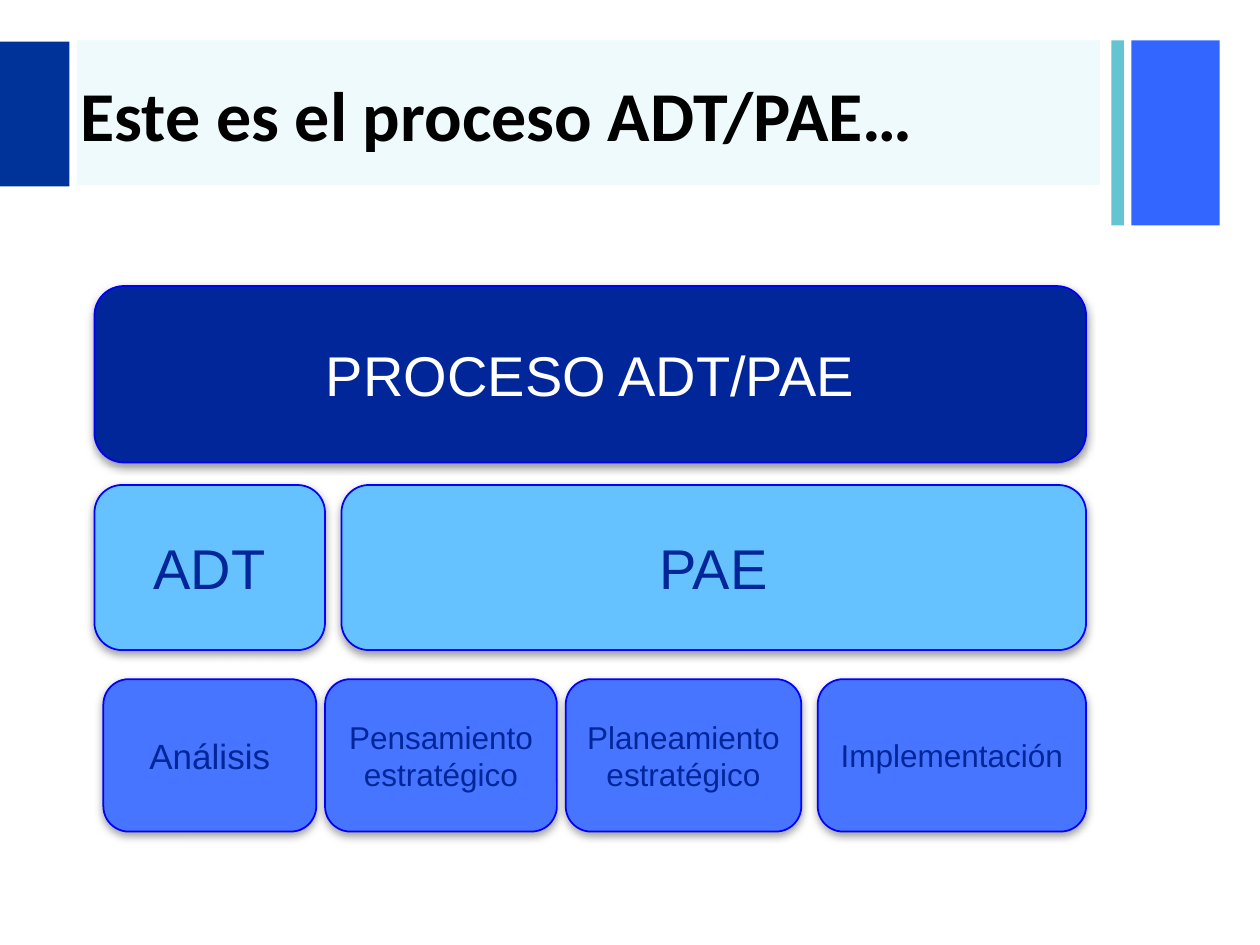
import pptx
import pptx.util
import pptx.dml.color
import pptx.enum.shapes
import pptx.enum.text
import pptx.oxml
import pptx.oxml.ns

COLORS = {
    "navy": "002699", "sky": "66C2FF", "blue": "4775FF", "outline": "0000F9",
    "white": "FFFFFF", "black": "000000", "shadow": "808080",
    "right_block": "3366FF", "teal": "65C4D2", "band": "14C5D0", "left_block": "003399",
}

# Positions are percentages of the slide: left, top, width, height.
HEADER = [
    ("right_block", (89.8, 4.27, 7, 19.6), 100),
    ("teal", (88.2, 4.27, 1, 19.6), 100),
    ("band", (6.1, 4.27, 81.2, 15.33), 7),
    ("left_block", (0, 4.4, 5.5, 15.33), 100),
]
TITLE = ("Este es el proceso ADT/PAE…", (5.4, 4.53, 82.7, 14.93))

# Each row: top, height, fill, text colour, cells of (text, left, right, size).
ROWS = [
    (30.27, 18.67, "navy", "white", [("PROCESO ADT/PAE", 7.5, 86.2, 32)]),
    (51.33, 17.47, "sky", "navy", [("ADT", 7.5, 25.8, 32), ("PAE", 27.1, 86.2, 32)]),
    (71.87, 16.13, "blue", "navy", [
        ("Análisis", 8.2, 25.1, 20),
        ("Pensamiento estratégico", 25.8, 44.2, 18),
        ("Planeamiento estratégico", 44.9, 63.6, 18),
        ("Implementación", 64.9, 86.2, 18),
    ]),
]

presentation = pptx.Presentation()
presentation.slide_width = pptx.util.Inches(10)
presentation.slide_height = pptx.util.Inches(7.5)
slide = presentation.slides.add_slide(presentation.slide_layouts[6])


def rgb(name):
    return pptx.dml.color.RGBColor.from_string(COLORS[name])


def place(left, top, width, height):
    """Turn percentages of the slide into lengths."""
    across, down = presentation.slide_width / 100, presentation.slide_height / 100
    return [round(n) for n in (left * across, top * down, width * across, height * down)]


def add_block(kind, area, fill):
    shape = slide.shapes.add_shape(kind, *place(*area))
    shape.shadow.inherit = False
    shape.fill.solid()
    shape.fill.fore_color.rgb = rgb(fill)
    return shape


def set_opacity(shape, percent):
    color = shape.fill._xPr.find(".//" + pptx.oxml.ns.qn("a:srgbClr"))
    color.append(pptx.oxml.parse_xml(
        f'<a:alpha {pptx.oxml.ns.nsdecls("a")} val="{percent * 1000}"/>'))


def add_shadow(shape):
    effects = shape._element.spPr.find(pptx.oxml.ns.qn("a:effectLst"))
    effects.append(pptx.oxml.parse_xml(
        f'<a:outerShdw {pptx.oxml.ns.nsdecls("a")} blurRad="{pptx.util.Pt(5)}" '
        f'dist="{pptx.util.Pt(2)}" dir="5400000" rotWithShape="0">'
        f'<a:srgbClr val="{COLORS["shadow"]}"><a:alpha val="75000"/></a:srgbClr>'
        '</a:outerShdw>'))


def write(shape, text, font_name, size, color, alignment, bold=False):
    frame = shape.text_frame
    frame.word_wrap = True
    frame.vertical_anchor = pptx.enum.text.MSO_ANCHOR.MIDDLE
    paragraph = frame.paragraphs[0]
    paragraph.text = text
    paragraph.alignment = alignment
    paragraph.font.name = font_name
    paragraph.font.size = pptx.util.Pt(size)
    paragraph.font.bold = bold
    paragraph.font.color.rgb = rgb(color)


for fill, area, opacity in HEADER:
    block = add_block(pptx.enum.shapes.MSO_SHAPE.RECTANGLE, area, fill)
    block.line.fill.background()
    if opacity < 100:
        set_opacity(block, opacity)

title, title_area = TITLE
write(slide.shapes.add_textbox(*place(*title_area)), title, "Calibri", 40, "black",
      pptx.enum.text.PP_ALIGN.LEFT, bold=True)

for top, height, fill, text_color, cells in ROWS:
    for text, left, right, size in cells:
        box = add_block(pptx.enum.shapes.MSO_SHAPE.ROUNDED_RECTANGLE,
                        (left, top, right - left, height), fill)
        box.line.color.rgb = rgb("outline")
        box.line.width = pptx.util.Pt(1)
        add_shadow(box)
        write(box, text, "Arial", size, text_color, pptx.enum.text.PP_ALIGN.CENTER)

presentation.save("out.pptx")
